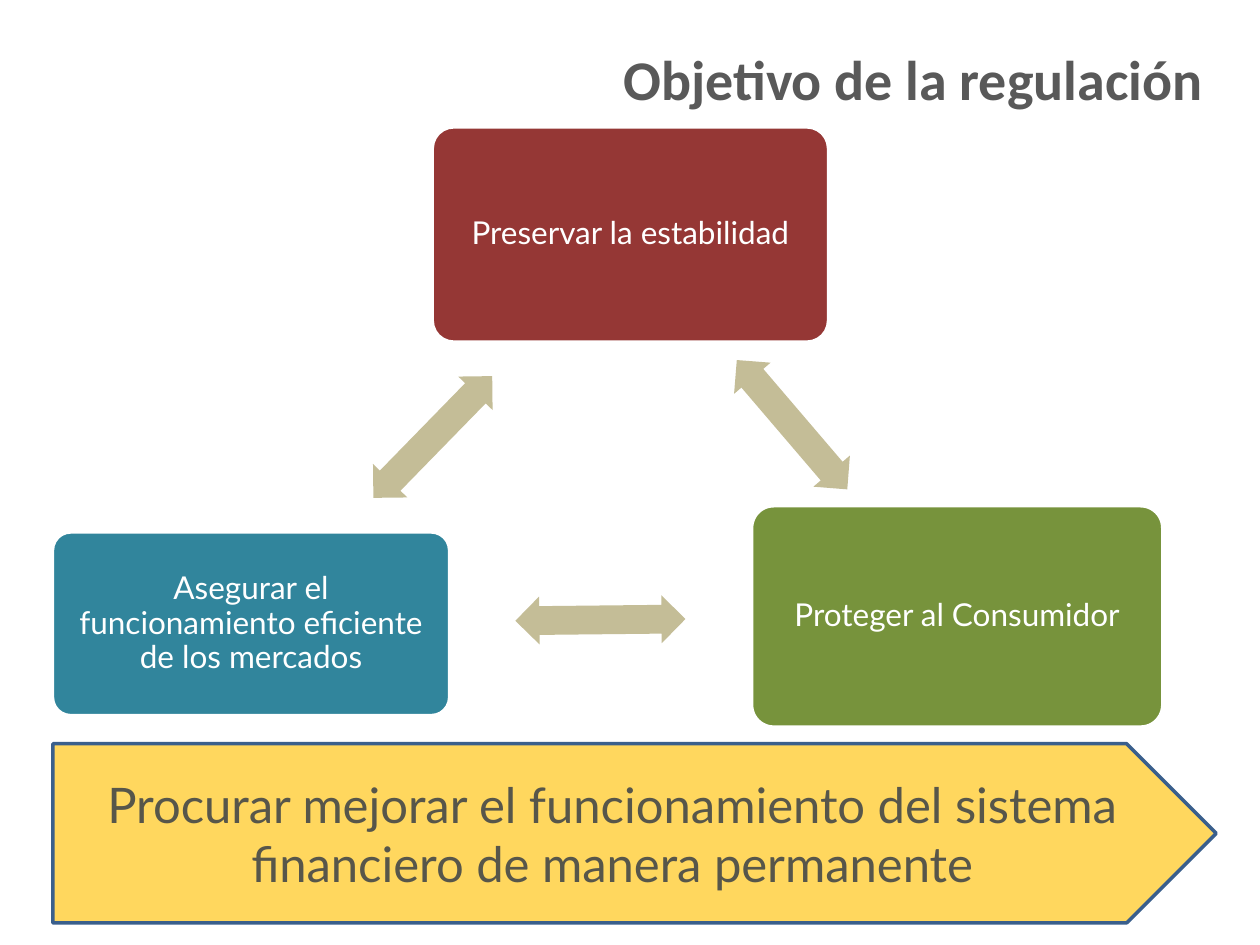
from pptx import Presentation
from pptx.dml.color import RGBColor
from pptx.enum import shapes, text
from pptx.oxml.ns import qn
from pptx.util import Pt
from lxml import etree


def paint(form, hue):
    form.fill.solid()
    form.fill.fore_color.rgb = RGBColor.from_string(hue)


def write(form, words, face, size, hue, side):
    frame = form.text_frame
    frame.text = words
    frame.word_wrap = True
    para = frame.paragraphs[0]
    para.alignment = side
    font = para.runs[0].font
    font.name, font.size = face, Pt(size)
    font.color.rgb = RGBColor.from_string(hue)
    return frame, para


kind, side = shapes.MSO_SHAPE, text.PP_ALIGN
deck = Presentation()
deck.slide_width, deck.slide_height = Pt(720), Pt(540)
slide = deck.slides.add_slide(deck.slide_layouts[5])

title = slide.shapes.title
title.left, title.top, title.width, title.height = Pt(198), Pt(21.6), Pt(496.8), Pt(46)
frame, para = write(title, "Objetivo de la regulación", "Calibri", 32, "595959", side.RIGHT)
frame.vertical_anchor = text.MSO_ANCHOR.TOP
frame.auto_size = text.MSO_AUTO_SIZE.NONE
para.runs[0].font.bold = True

goals = [
    ("Preservar la estabilidad", "953735", 247, 72.5, 226.5, 123),
    ("Proteger al Consumidor", "77933C", 429.5, 289, 235, 126.5),
    ("Asegurar el funcionamiento eficiente de los mercados", "31859C", 30, 304, 227, 105),
]
for words, hue, x, y, wide, high in goals:
    box = slide.shapes.add_shape(kind.ROUNDED_RECTANGLE, Pt(x), Pt(y), Pt(wide), Pt(high))
    box.shadow.inherit = False
    box.adjustments[0] = 0.1
    paint(box, hue)
    box.line.color.rgb = RGBColor.from_string("FFFFFF")
    box.line.width = Pt(2)
    frame, para = write(box, words, "Lato", 18, "FFFFFF", side.CENTER)
    para.line_spacing = 0.9
    frame.margin_left = frame.margin_right = Pt(5.4)
    frame.margin_top = frame.margin_bottom = Pt(5.4)

for x, y, turn in [(404, 229, 49.5), (294.5, 340.5, 179.4), (198.7, 236, 314.3)]:
    arrow = slide.shapes.add_shape(kind.LEFT_RIGHT_ARROW, Pt(x), Pt(y), Pt(97.2), Pt(27.4))
    arrow.shadow.inherit = False
    arrow.adjustments[0], arrow.adjustments[1] = 0.6, 0.5
    arrow.rotation = turn
    paint(arrow, "C4BD97")
    arrow.line.fill.background()

banner = slide.shapes.add_shape(kind.PENTAGON, Pt(30.2), Pt(425), Pt(664.8), Pt(102.4))
banner.shadow.inherit = False
paint(banner, "FFC000")
tint = banner._element.spPr.find(qn("a:solidFill"))[0]
etree.SubElement(tint, qn("a:alpha")).set("val", "63000")
banner.line.color.rgb = RGBColor.from_string("3A5F8C")
banner.line.width = Pt(2)
write(banner, "Procurar mejorar el funcionamiento del sistema financiero de manera permanente",
      "Lato", 28, "57564A", side.CENTER)

deck.save("out.pptx")
